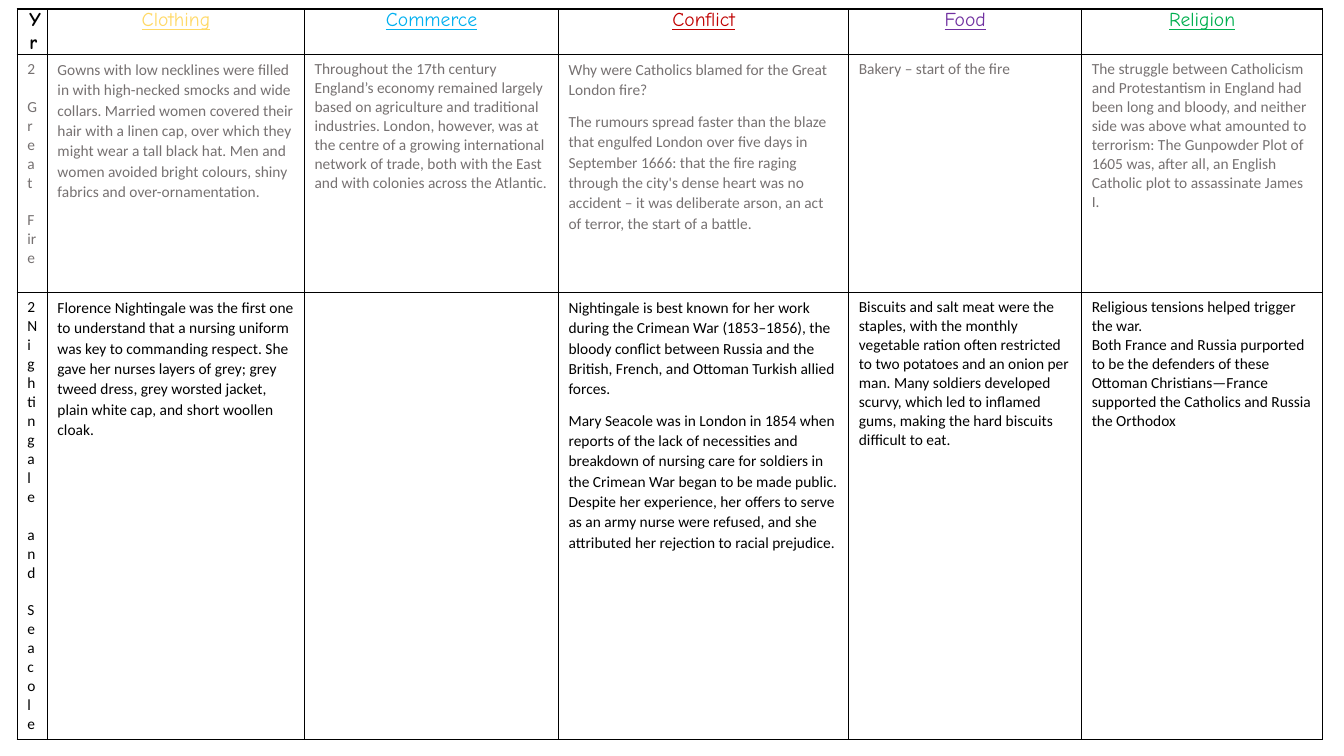
from dataclasses import dataclass

from lxml import etree
from pptx import Presentation, util as u
from pptx.dml.color import RGBColor
from pptx.enum import text as t
from pptx.oxml import ns

WIDE, HIGH = u.Inches(13.33), u.Inches(7.5)
LEFT, TOP = 1.28, 1.2
COLS = (2.25, 19.13, 18.9, 21.6, 17.33, 17.93)
ROWS = (6, 31.47, 59.07)
GREY, BLACK = "767171", "000000"


@dataclass
class Head:
    name: str
    color: str
    bold: bool = False


@dataclass
class Entry:
    lines: tuple[str, ...] = ()
    loose: bool = False
    gaps: tuple[int, ...] = ()


@dataclass
class Topic:
    color: str
    cells: tuple[Entry, ...]


HEADS = (
    Head("Yr", BLACK, True),
    Head("Clothing", "FFD966"),
    Head("Commerce", "00B0F0"),
    Head("Conflict", "C00000"),
    Head("Food", "7030A0"),
    Head("Religion", "00B050"),
)

TOPICS = (
    Topic(GREY, (
        Entry(("2", "Great", "Fire"), gaps=(1, 2)),
        Entry(("Gowns with low necklines were filled in with high-necked smocks and wide collars. "
               "Married women covered their hair with a linen cap, over which they might wear a tall "
               "black hat. Men and women avoided bright colours, shiny fabrics and "
               "over-ornamentation.",), True),
        Entry(("Throughout the 17th century England’s economy remained largely based on agriculture "
               "and traditional industries. London, however, was at the centre of a growing "
               "international network of trade, both with the East and with colonies across the "
               "Atlantic.",)),
        Entry(("Why were Catholics blamed for the Great London fire?",
               "The rumours spread faster than the blaze that engulfed London over five days in "
               "September 1666: that the fire raging through the city's dense heart was no accident – "
               "it was deliberate arson, an act of terror, the start of a battle."), True),
        Entry(("Bakery – start of the fire",)),
        Entry(("The struggle between Catholicism and Protestantism in England had been long and "
               "bloody, and neither side was above what amounted to terrorism: The Gunpowder Plot of "
               "1605 was, after all, an English Catholic plot to assassinate James I.",)),
    )),
    Topic(BLACK, (
        Entry(("2", "Nightingale", "and", "Seacole"), gaps=(2, 3)),
        Entry(("Florence Nightingale was the first one to understand that a nursing uniform was key "
               "to commanding respect. She gave her nurses layers of grey; grey tweed dress, grey "
               "worsted jacket, plain white cap, and short woollen cloak.",), True),
        Entry(),
        Entry(("Nightingale is best known for her work during the Crimean War (1853–1856), the bloody "
               "conflict between Russia and the British, French, and Ottoman Turkish allied forces.",
               "Mary Seacole was in London in 1854 when reports of the lack of necessities and "
               "breakdown of nursing care for soldiers in the Crimean War began to be made public. "
               "Despite her experience, her offers to serve as an army nurse were refused, and she "
               "attributed her rejection to racial prejudice."), True),
        Entry(("Biscuits and salt meat were the staples, with the monthly vegetable ration often "
               "restricted to two potatoes and an onion per man. Many soldiers developed scurvy, which "
               "led to inflamed gums, making the hard biscuits difficult to eat.",)),
        Entry(("Religious tensions helped trigger the war.",
               "Both France and Russia purported to be the defenders of these Ottoman "
               "Christians—France supported the Catholics and Russia the Orthodox")),
    )),
)


def across(share: float) -> u.Emu:
    return u.Emu(round(WIDE * share / 100))


def down(share: float) -> u.Emu:
    return u.Emu(round(HIGH * share / 100))


def tint(font, color: str) -> None:
    font.color.rgb = RGBColor.from_string(color)


def frame(cell) -> None:
    cell.fill.background()
    props = cell._tc.get_or_add_tcPr()
    for spot, side in enumerate(("lnL", "lnR", "lnT", "lnB")):
        line = etree.Element(ns.qn(f"a:{side}"), w=str(u.Pt(1)))
        fill = etree.SubElement(line, ns.qn("a:solidFill"))
        etree.SubElement(fill, ns.qn("a:srgbClr"), val=BLACK)
        props.insert(spot, line)


def style(para, name: str, size: int, color: str) -> None:
    for run in para.runs:
        run.font.name, run.font.size = name, u.Pt(size)
        tint(run.font, color)


def title(cell, head: Head) -> None:
    frame(cell)
    cell.margin_left = cell.margin_right = u.Inches(0.12)
    cell.margin_top = cell.margin_bottom = 0
    para = cell.text_frame.paragraphs[0]
    para.text = head.name
    para.alignment = t.PP_ALIGN.CENTER
    style(para, "Comic Neue", 14, head.color)
    font = para.runs[0].font
    font.bold, font.underline = head.bold, not head.bold


def body(cell, entry: Entry, color: str) -> None:
    frame(cell)
    if not entry.lines:
        return
    cell.text_frame.text = "\n".join(entry.lines)
    for spot, para in enumerate(cell.text_frame.paragraphs):
        style(para, "Calibri", 11, color)
        if entry.loose:
            para.line_spacing, para.space_after = 1.07, u.Pt(8)
        if spot in entry.gaps:
            para.space_before = u.Pt(13.4)


def main() -> None:
    deck = Presentation()
    deck.slide_width, deck.slide_height = WIDE, HIGH
    slide = deck.slides.add_slide(deck.slide_layouts[6])
    grid = slide.shapes.add_table(
        len(ROWS), len(COLS), across(LEFT), down(TOP), across(sum(COLS)), down(sum(ROWS))
    ).table
    grid.first_row = grid.horz_banding = False
    for col, share in zip(grid.columns, COLS):
        col.width = across(share)
    for row, share in zip(grid.rows, ROWS):
        row.height = down(share)
    for spot, head in enumerate(HEADS):
        title(grid.cell(0, spot), head)
    for row, topic in enumerate(TOPICS, 1):
        for spot, entry in enumerate(topic.cells):
            body(grid.cell(row, spot), entry, topic.color)
    deck.save("out.pptx")


if __name__ == "__main__":
    main()
